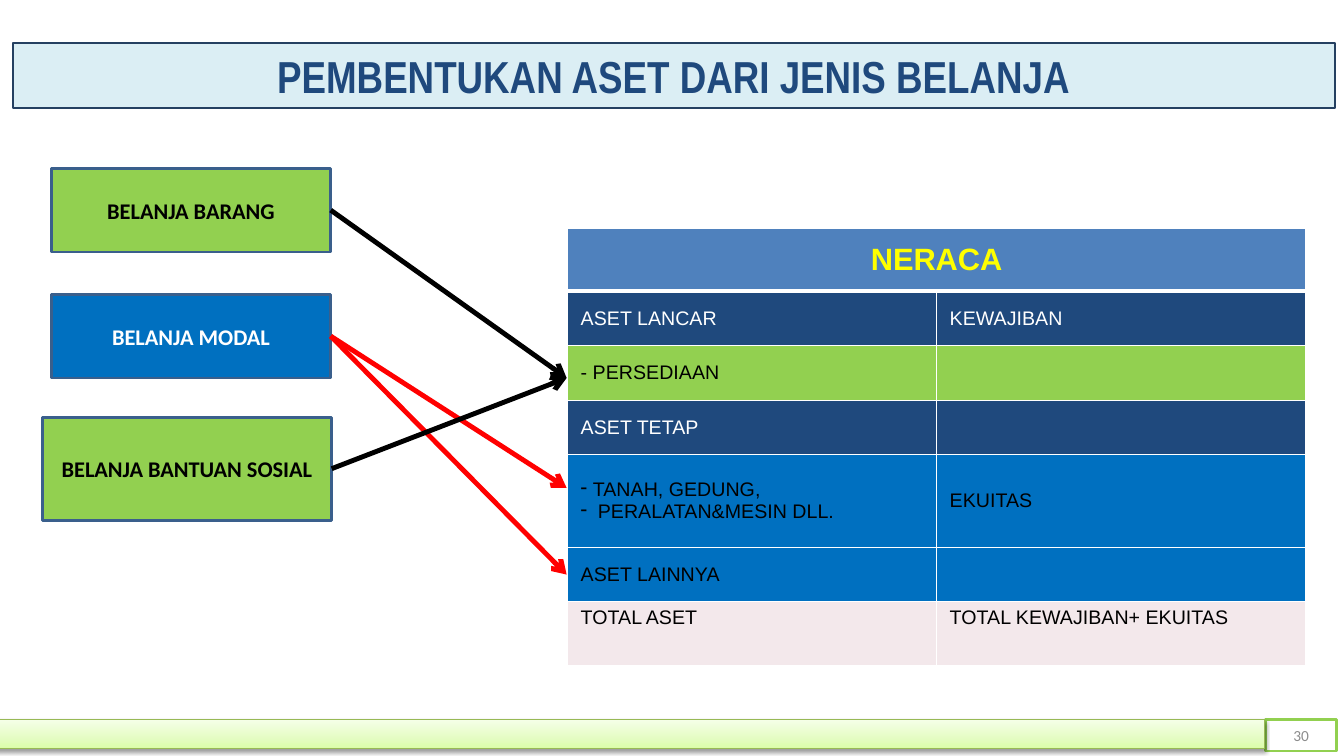
from dataclasses import dataclass

from lxml.etree import SubElement
from pptx import Presentation
from pptx.dml.color import RGBColor
from pptx.enum.shapes import MSO_CONNECTOR, MSO_SHAPE
from pptx.enum.text import MSO_ANCHOR, PP_ALIGN
from pptx.oxml import parse_xml
from pptx.oxml.ns import nsdecls, qn
from pptx.util import Inches, Pt


@dataclass(frozen=True)
class Theme:
    white: str = "FFFFFF"
    black: str = "000000"
    red: str = "FF0000"
    yellow: str = "FFFF00"
    green: str = "92D050"
    blue: str = "0070C0"
    navy: str = "1F497D"
    header: str = "4F81BD"
    total: str = "F3E8EB"
    outline: str = "3A5F8C"
    title_fill: str = "DBEEF4"
    title_line: str = "254061"
    page_text: str = "8C8C8C"
    bar_line: str = "98B955"
    bar_stops: tuple = ((0, "DAFDA7"), (35, "E4FCC2"), (100, "F5FFE7"))
    title_size: int = 32
    neraca_size: int = 22
    box_size: int = 16
    cell_size: int = 14
    page_size: int = 11
    title_font: str = "Arial Narrow"
    box_font: str = "Calibri"
    table_font: str = "Arial"


THEME = Theme()
RIGHT_SIDE = 3


def write_text(frame, text, *, size, color, font, bold=False,
               align=PP_ALIGN.CENTER, anchor=MSO_ANCHOR.MIDDLE):
    frame.word_wrap = True
    frame.vertical_anchor = anchor
    for index, line in enumerate(text.split("\n")):
        paragraph = frame.add_paragraph() if index else frame.paragraphs[0]
        paragraph.alignment = align
        run = paragraph.add_run()
        run.text = line
        run.font.size = Pt(size)
        run.font.name = font
        run.font.bold = bold
        run.font.color.rgb = RGBColor.from_string(color)


def paint(shape, fill, line, width):
    shape.fill.solid()
    shape.fill.fore_color.rgb = RGBColor.from_string(fill)
    shape.line.color.rgb = RGBColor.from_string(line)
    shape.line.width = Pt(width)


def add_title(slide, text):
    title = slide.shapes.title
    title.left, title.top = Inches(0.13), Inches(0.43)
    title.width, title.height = Inches(13.11), Inches(0.64)
    paint(title, THEME.title_fill, THEME.title_line, 1.5)
    write_text(title.text_frame, text, size=THEME.title_size, bold=True,
               color=THEME.navy, font=THEME.title_font)


def add_box(slide, bounds, fill, line=THEME.outline, width=2):
    box = slide.shapes.add_shape(MSO_SHAPE.RECTANGLE, *map(Inches, bounds))
    box.shadow.inherit = False
    paint(box, fill, line, width)
    return box


def add_spending(slide, text, bounds, fill, color):
    box = add_box(slide, bounds, fill)
    write_text(box.text_frame, text, size=THEME.box_size, bold=True,
               color=color, font=THEME.box_font)
    return box


def add_arrow(slide, source, end_y, color):
    arrow = slide.shapes.add_connector(
        MSO_CONNECTOR.STRAIGHT, 0, 0, Inches(5.62), Inches(end_y))
    arrow.begin_connect(source, RIGHT_SIDE)
    arrow.line.color.rgb = RGBColor.from_string(color)
    arrow.line.width = Pt(3.5)
    SubElement(arrow.line._get_or_add_ln(), qn("a:tailEnd"), type="arrow")
    SubElement(arrow._element.spPr, qn("a:effectLst"))


def set_borders(cell, **widths):
    properties = cell._tc.get_or_add_tcPr()
    for index, side in enumerate("LRTB"):
        width = Pt(widths.get(side, 1))
        properties.insert(index, parse_xml(
            f'<a:ln{side} {nsdecls("a")} w="{width}"><a:solidFill>'
            f'<a:srgbClr val="{THEME.white}"/></a:solidFill></a:ln{side}>'))


def add_dash(paragraph, indent):
    properties = paragraph._p.get_or_add_pPr()
    properties.set("marL", str(Inches(indent)))
    properties.set("indent", str(-Inches(indent)))
    SubElement(properties, qn("a:buChar"), char="-")


def add_balance_sheet(slide):
    rows = (
        (0.62, THEME.header, THEME.yellow, ("NERACA", "")),
        (0.54, THEME.navy, THEME.white, ("ASET LANCAR", "KEWAJIBAN")),
        (0.54, THEME.green, THEME.black, ("- PERSEDIAAN", "")),
        (0.54, THEME.navy, THEME.white, ("ASET TETAP", "")),
        (0.92, THEME.blue, THEME.black,
         ("TANAH, GEDUNG,\nPERALATAN&MESIN DLL.", "EKUITAS")),
        (0.54, THEME.blue, THEME.black, ("ASET LAINNYA", "")),
        (0.63, THEME.total, THEME.black,
         ("TOTAL ASET", "TOTAL KEWAJIBAN+ EKUITAS")),
    )
    balance = slide.shapes.add_table(
        len(rows), 2, Inches(5.63), Inches(2.27), Inches(7.32), Inches(4.32)).table
    balance.first_row = balance.horz_banding = False
    last = len(rows) - 1
    for index, (height, fill, color, entries) in enumerate(rows):
        balance.rows[index].height = Inches(height)
        is_header = index == 0
        for cell, entry in zip(balance.rows[index].cells, entries):
            cell.fill.solid()
            cell.fill.fore_color.rgb = RGBColor.from_string(fill)
            cell.margin_left = cell.margin_right = Inches(0.13)
            set_borders(cell, T=3 if index == 1 else 1, B=3 if is_header else 1)
            cell.vertical_anchor = MSO_ANCHOR.TOP if index == last else MSO_ANCHOR.MIDDLE
            if entry:
                write_text(cell.text_frame, entry, color=color, bold=is_header,
                           size=THEME.neraca_size if is_header else THEME.cell_size,
                           font=THEME.table_font, anchor=None,
                           align=PP_ALIGN.CENTER if is_header else PP_ALIGN.LEFT)
    balance.cell(0, 0).merge(balance.cell(0, 1))
    for paragraph, indent in zip(balance.cell(4, 0).text_frame.paragraphs, (0.12, 0.17)):
        add_dash(paragraph, indent)


def add_footer(slide, page):
    page_box = add_box(slide, (12.55, 7.14, 0.71, 0.31), THEME.white, THEME.green)
    write_text(page_box.text_frame, page, size=THEME.page_size,
               color=THEME.page_text, font=THEME.box_font)
    bar = add_box(slide, (-0.05, 7.14, 12.59, 0.29), THEME.white, THEME.bar_line, 0.75)
    stops = "".join(f'<a:gs pos="{position * 1000}"><a:srgbClr val="{color}"/></a:gs>'
                    for position, color in THEME.bar_stops)
    properties = bar._element.spPr
    properties.replace(properties.find(qn("a:solidFill")), parse_xml(
        f'<a:gradFill {nsdecls("a")}><a:gsLst>{stops}</a:gsLst>'
        f'<a:lin ang="{270 * 60000}" scaled="0"/></a:gradFill>'))
    shadow = SubElement(properties.find(qn("a:effectLst")), qn("a:outerShdw"),
                        blurRad=str(Pt(3.1)), dist=str(Pt(1.6)),
                        dir=str(90 * 60000), rotWithShape="0")
    shade = SubElement(shadow, qn("a:srgbClr"), val=THEME.black)
    SubElement(shade, qn("a:alpha"), val="38000")


def main():
    deck = Presentation()
    deck.slide_width, deck.slide_height = Inches(13.33), Inches(7.5)
    slide = deck.slides.add_slide(deck.slide_layouts[5])
    add_title(slide, "PEMBENTUKAN ASET DARI JENIS BELANJA")
    add_balance_sheet(slide)
    goods = add_spending(slide, "BELANJA BARANG", (0.51, 1.67, 2.77, 0.83),
                         THEME.green, THEME.black)
    capital = add_spending(slide, "BELANJA MODAL", (0.51, 2.92, 2.77, 0.83),
                           THEME.blue, THEME.white)
    social = add_spending(slide, "BELANJA BANTUAN SOSIAL", (0.42, 4.14, 2.87, 1.02),
                          THEME.green, THEME.black)
    for source, end_y, color in (
        (goods, 3.75, THEME.black),
        (capital, 4.84, THEME.red),
        (capital, 5.7, THEME.red),
        (social, 3.75, THEME.black),
    ):
        add_arrow(slide, source, end_y, color)
    add_footer(slide, "30")
    deck.save("out.pptx")


if __name__ == "__main__":
    main()
